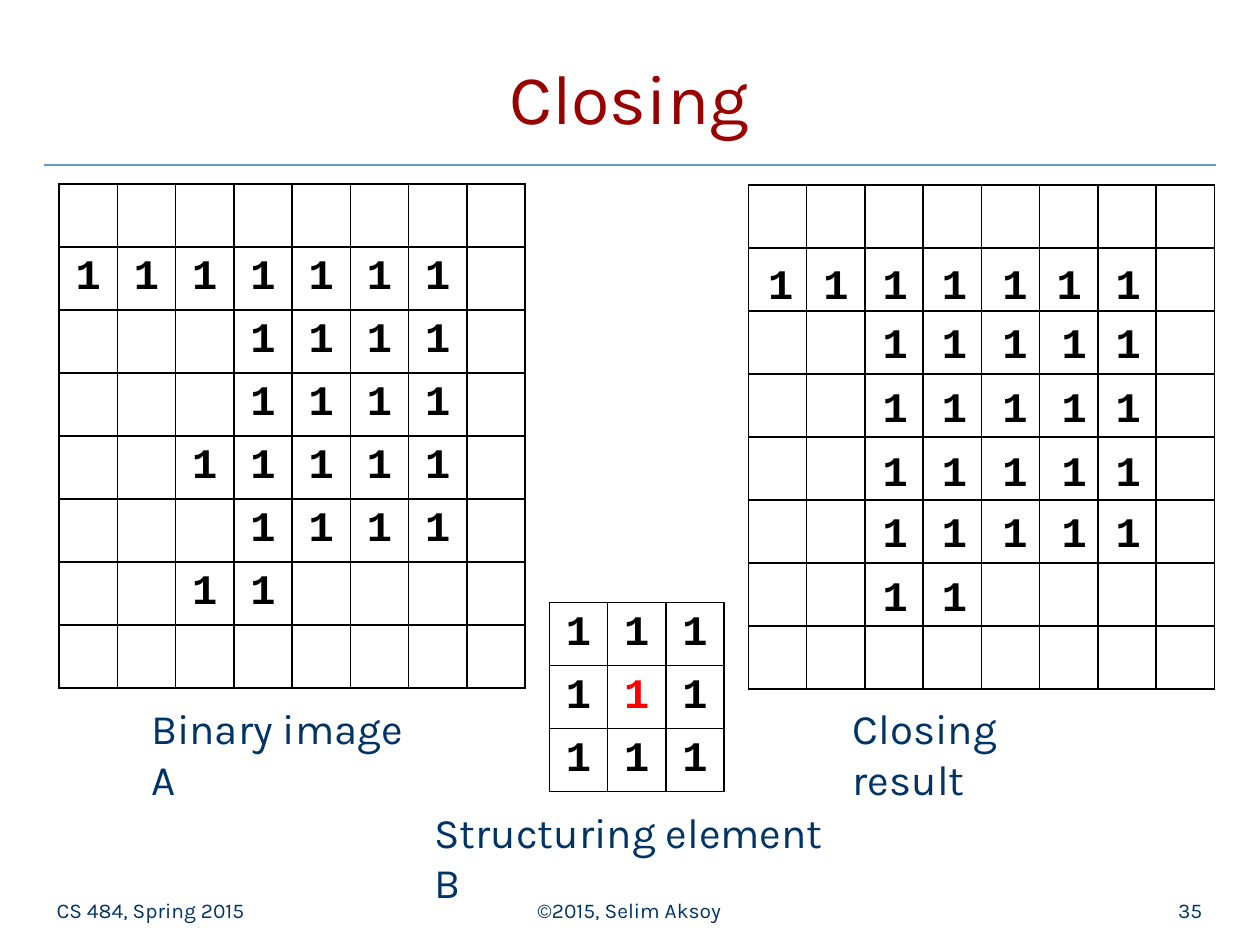
"""Build the slide on morphological closing: two pixel grids and a structuring element."""
from dataclasses import dataclass

from lxml.etree import SubElement
from pptx import Presentation
from pptx.dml.color import RGBColor
from pptx.enum.shapes import MSO_CONNECTOR
from pptx.enum.text import MSO_ANCHOR as Anchor, MSO_AUTO_SIZE as AutoSize, PP_ALIGN as Align
from pptx.oxml.ns import qn
from pptx.util import Pt

NAVY, MAROON, BLUE, BLACK, RED = "003366", "990000", "6699CC", "000000", "FF0000"
SANS, MONO = "Karla", "Courier New"
CELL_W, CELL_H = 33.3, 36
DIGIT_W, DIGIT_H = 36.72, 31.68


@dataclass
class Label:
    text: str
    x: float
    y: float
    w: float
    h: float
    size: float = 24
    align: Align = Align.LEFT
    anchor: Anchor = Anchor.TOP


@dataclass
class Grid:
    x: float
    y: float
    rows: list[str]
    red: tuple[int, int] | None = None


@dataclass
class DigitRow:
    y: float
    lefts: list[float]


LABELS = [
    Label("CS 484, Spring 2015", 25.2, 505.44, 149.76, 25.2, 12, Align.LEFT, Anchor.BOTTOM),
    Label("©2015, Selim Aksoy", 245.52, 505.44, 228.24, 25.2, 12, Align.CENTER, Anchor.BOTTOM),
    Label("35", 544.32, 505.44, 149.76, 25.2, 12, Align.RIGHT, Anchor.BOTTOM),
    Label("Binary image A", 79.2, 398.16, 174.24, 36),
    Label("Structuring element B", 241.2, 457.2, 244.8, 36),
    Label("Closing result", 480.24, 398.16, 156.96, 36),
]

EMPTY = "." * 8
GRIDS = [
    Grid(427.68, 105.84, [EMPTY] * 8),
    Grid(33.84, 105.12, [EMPTY, "1111111.", "...1111.", "...1111.", "..11111.",
                         "...1111.", "..11....", EMPTY]),
    Grid(313.92, 344.16, ["111"] * 3, red=(1, 1)),
]

INNER = [493.2, 527.04, 561.6, 595.44, 626.4]
DIGIT_ROWS = [
    DigitRow(145.44, [427.68, 459.36, 493.2, 527.04, 561.6, 592.56, 626.4]),
    *[DigitRow(y, INNER) for y in (179.28, 216, 252.72, 287.28)],
    DigitRow(324, INNER[:2]),
]


def rgb(value: str) -> RGBColor:
    """Turn a hex string into a colour."""
    return RGBColor.from_string(value)


def add_run(p, text: str, size: float, font: str, color: str, bold: bool = False) -> None:
    """Add one formatted run to a paragraph."""
    r = p.add_run()
    r.text = text
    r.font.size, r.font.name, r.font.bold = Pt(size), font, bold
    r.font.color.rgb = rgb(color)


def add_title(s, text: str) -> None:
    """Place and fill the title placeholder."""
    sp = s.shapes.title
    sp.left, sp.top, sp.width, sp.height = Pt(25.2), Pt(15.12), Pt(668.88), Pt(67.68)
    tf = sp.text_frame
    tf.vertical_anchor = Anchor.BOTTOM
    p = tf.paragraphs[0]
    p.alignment = Align.CENTER
    add_run(p, text, 40, SANS, MAROON)


def add_rule(s, x1: float, x2: float, y: float) -> None:
    """Draw the thin line under the title."""
    line = s.shapes.add_connector(MSO_CONNECTOR.STRAIGHT, Pt(x1), Pt(y), Pt(x2), Pt(y))
    line.line.color.rgb = rgb(BLUE)
    line.line.width = Pt(0.75)
    SubElement(line._element.spPr, qn("a:effectLst"))


def add_label(s, label: Label) -> None:
    """Add a caption or footer text box."""
    sp = s.shapes.add_textbox(Pt(label.x), Pt(label.y), Pt(label.w), Pt(label.h))
    tf = sp.text_frame
    tf.word_wrap = True
    tf.vertical_anchor = label.anchor
    p = tf.paragraphs[0]
    p.alignment = label.align
    add_run(p, label.text, label.size, SANS, NAVY)


def add_borders(cell) -> None:
    """Give a cell a black one-point border on each side."""
    tc_pr = cell._tc.get_or_add_tcPr()
    for side in ("lnL", "lnR", "lnT", "lnB"):
        ln = SubElement(tc_pr, qn(f"a:{side}"), w=str(Pt(1)))
        fill = SubElement(ln, qn("a:solidFill"))
        SubElement(fill, qn("a:srgbClr"), val=BLACK)


def add_grid(s, grid: Grid) -> None:
    """Draw a pixel grid as a table."""
    n_rows, n_cols = len(grid.rows), len(grid.rows[0])
    table = s.shapes.add_table(n_rows, n_cols, Pt(grid.x), Pt(grid.y),
                               Pt(CELL_W * n_cols), Pt(CELL_H * n_rows)).table
    table.first_row = table.horz_banding = False
    for col in table.columns:
        col.width = Pt(CELL_W)
    for i, values in enumerate(grid.rows):
        table.rows[i].height = Pt(CELL_H)
        for j, value in enumerate(values):
            cell = table.cell(i, j)
            add_borders(cell)
            cell.fill.background()
            cell.vertical_anchor = Anchor.MIDDLE
            if value == "1":
                p = cell.text_frame.paragraphs[0]
                p.alignment = Align.CENTER
                add_run(p, value, 24, MONO, RED if (i, j) == grid.red else BLACK, True)


def add_digit(s, x: float, y: float) -> None:
    """Add a single 1 over the result grid."""
    sp = s.shapes.add_textbox(Pt(x), Pt(y), Pt(DIGIT_W), Pt(DIGIT_H))
    tf = sp.text_frame
    tf.word_wrap = True
    tf.auto_size = AutoSize.SHAPE_TO_FIT_TEXT
    tf.vertical_anchor = Anchor.MIDDLE
    tf.margin_left = tf.margin_right = tf.margin_top = tf.margin_bottom = Pt(1.44)
    p = tf.paragraphs[0]
    p.alignment = Align.CENTER
    p.space_before = Pt(4)
    add_run(p, "1", 24, MONO, BLACK, True)


def main() -> None:
    """Build and save the slide."""
    prs = Presentation()
    prs.slide_width, prs.slide_height = Pt(720), Pt(540)
    s = prs.slides.add_slide(prs.slide_layouts[5])
    add_rule(s, 25.2, 694.8, 94.32)
    add_title(s, "Closing")
    for label in LABELS:
        add_label(s, label)
    for grid in GRIDS:
        add_grid(s, grid)
    for row in DIGIT_ROWS:
        for x in row.lefts:
            add_digit(s, x, row.y)
    prs.save("out.pptx")


if __name__ == "__main__":
    main()
